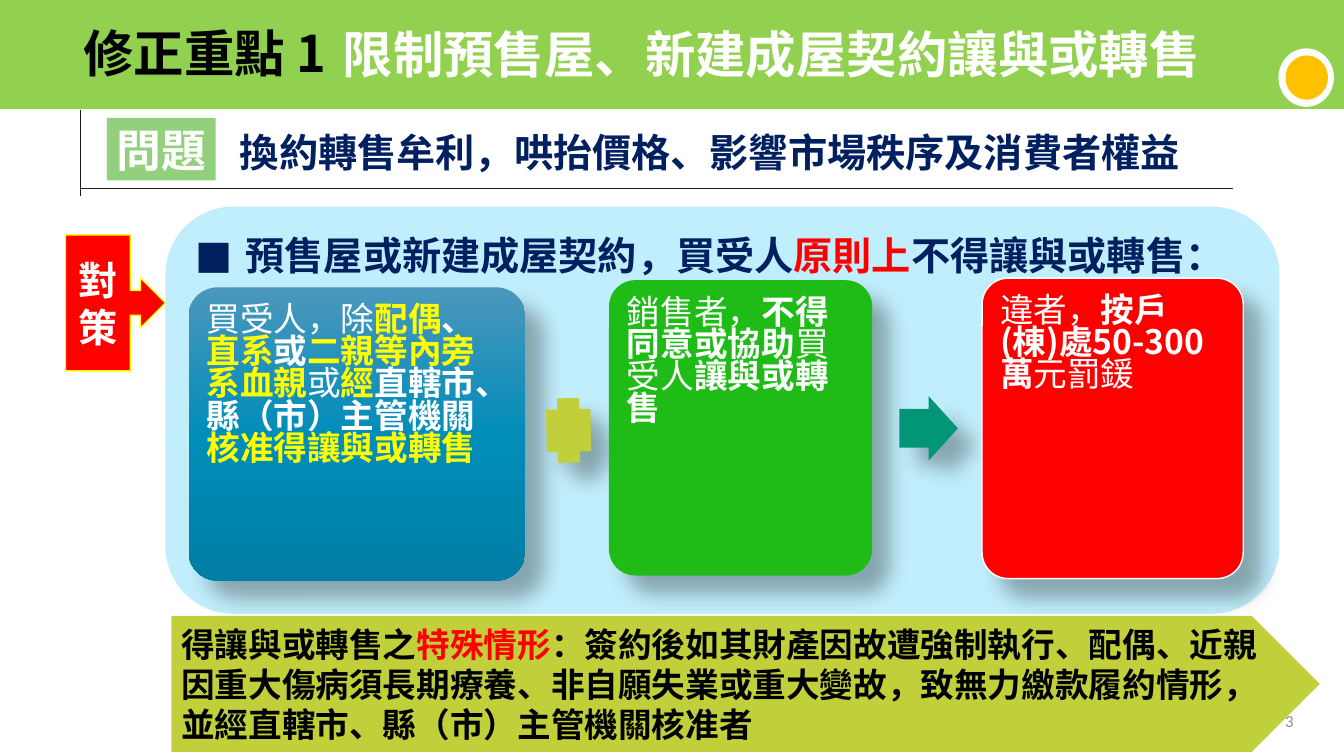
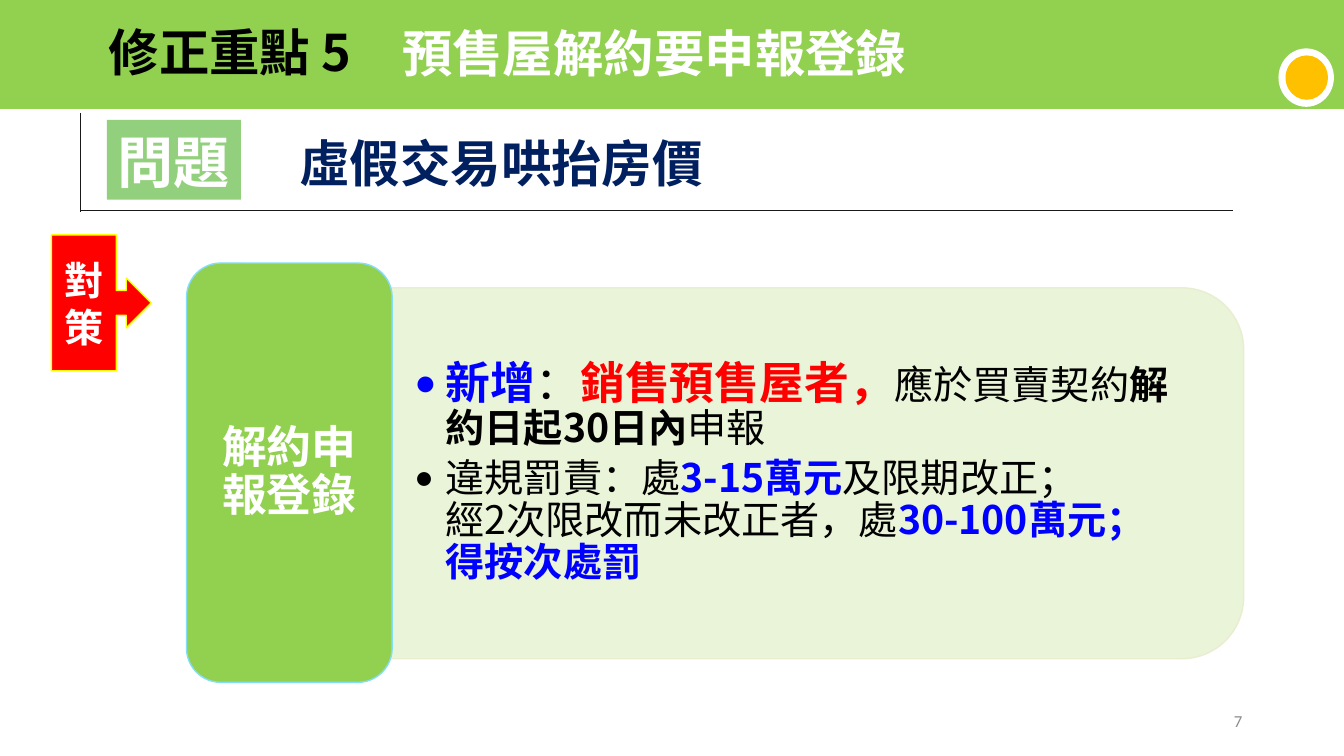
"""Build two slides on the amended rules for pre-sale housing."""
from copy import deepcopy
from dataclasses import dataclass

from pptx import Presentation
from pptx.dml.color import RGBColor
from pptx.enum.shapes import MSO_CONNECTOR as Connector
from pptx.enum.shapes import MSO_SHAPE as Shape
from pptx.enum.text import MSO_ANCHOR as Anchor
from pptx.enum.text import PP_ALIGN as Align
from pptx.oxml.ns import qn
from pptx.oxml.xmlchemy import OxmlElement
from pptx.util import Inches, Pt


@dataclass(frozen=True)
class Theme:
    """Colours, fonts and type sizes of the deck."""
    font: str = "Noto Sans CJK SC"
    number_font: str = "Calibri"
    white: str = "FFFFFF"
    black: str = "000000"
    band: str = "92D050"
    amber: str = "FFC000"
    navy: str = "002060"
    red: str = "FF0000"
    yellow: str = "FFFF00"
    blue: str = "0000FF"
    label: str = "93D07D"
    rule: str = "191919"
    grey: str = "8C8C8C"
    panel: str = "C1EEFC"
    green: str = "1FBB16"
    teal: str = "029676"
    lime: str = "C0CF3A"
    pale: str = "E8F3D4"
    pale_line: str = "E8EDCE"
    sky_line: str = "84DDF9"
    gradient: tuple = ((0, "4B97BC"), (0.5, "018DB9"), (1, "007EA5"))
    title: int = 36
    huge: int = 40
    large: int = 32
    body: int = 28
    card: int = 24
    number: int = 12


THEME = Theme()


@dataclass(frozen=True)
class Span:
    """A stretch of text in one format; a newline is a line break."""
    text: str
    size: int
    color: str = THEME.black
    bold: bool = True
    font: str = THEME.font


def add_child(parent, tag, **attributes):
    """Append an XML element and return it."""
    child = OxmlElement(tag)
    for name, value in attributes.items():
        child.set(name, str(value))
    parent.append(child)
    return child


def add_span(paragraph, span):
    """Add the runs and line breaks of one span."""
    for index, line in enumerate(span.text.split("\n")):
        if index:
            paragraph.add_line_break()
        run = paragraph.add_run()
        run.text = line
        run.font.name = span.font
        run.font.size = Pt(span.size)
        run.font.bold = span.bold
        run.font.color.rgb = RGBColor.from_string(span.color)
        add_child(run.font._element, "a:ea", typeface=span.font)


def set_bullet(paragraph, character, indent):
    """Give a paragraph a hanging bullet."""
    properties = paragraph._p.get_or_add_pPr()
    properties.set("marL", str(Inches(indent)))
    properties.set("indent", str(-Inches(indent)))
    add_child(properties, "a:buFont", typeface=THEME.number_font)
    add_child(properties, "a:buChar", char=character)


def write(shape, *paragraphs, align=Align.LEFT, anchor=Anchor.TOP, margins=(0.1, 0.05),
          spacing=None, after=0, bullet=None, wrap=True):
    """Write paragraphs, each a list of spans, into a shape."""
    frame = shape.text_frame
    frame.word_wrap = wrap
    frame.vertical_anchor = anchor
    frame.margin_left = frame.margin_right = Inches(margins[0])
    frame.margin_top = frame.margin_bottom = Inches(margins[1])
    for index, spans in enumerate(paragraphs):
        paragraph = frame.add_paragraph() if index else frame.paragraphs[0]
        if bullet:
            set_bullet(paragraph, *bullet)
        paragraph.alignment = align
        paragraph.line_spacing = spacing
        paragraph.space_after = Pt(after)
        for span in spans:
            add_span(paragraph, span)


def add_text(slide, box, *paragraphs, **layout):
    """Add a text box."""
    shape = slide.shapes.add_textbox(*map(Inches, box))
    write(shape, *paragraphs, **layout)
    return shape


def add_block(slide, kind, box, fill, line=None, adjust=None, rotation=0):
    """Add a flat preset shape."""
    shape = slide.shapes.add_shape(kind, *map(Inches, box))
    shape.shadow.inherit = False
    shape.fill.solid()
    shape.fill.fore_color.rgb = RGBColor.from_string(fill)
    if line:
        shape.line.color.rgb = RGBColor.from_string(line)
        shape.line.width = Pt(1)
    else:
        shape.line.fill.background()
    if adjust is not None:
        shape.adjustments[0] = adjust
    shape.rotation = rotation
    return shape


def add_shadow(shape):
    """Give a shape a soft shadow to the lower right."""
    effects = shape._element.spPr.find(qn("a:effectLst"))
    shadow = add_child(effects, "a:outerShdw", blurRad=Pt(15), dist=Pt(18),
                       dir=45 * 60000, algn="tl", rotWithShape=0)
    color = add_child(shadow, "a:srgbClr", val=THEME.black)
    add_child(color, "a:alpha", val=30000)


def set_gradient(shape, stops):
    """Fill a shape with a gradient from top to bottom."""
    shape.fill.gradient()
    shape.fill.gradient_angle = 270
    stop_list = shape._element.spPr.find(qn("a:gradFill")).find(qn("a:gsLst"))
    while len(stop_list) < len(stops):
        stop_list.append(deepcopy(stop_list[0]))
    for stop, (position, color) in zip(shape.fill.gradient_stops, stops):
        stop.position = position
        stop.color.rgb = RGBColor.from_string(color)


def set_opacity(shape, percent):
    """Make the fill and the line of a shape partly transparent."""
    for color in shape._element.spPr.iter(qn("a:srgbClr")):
        add_child(color, "a:alpha", val=percent * 1000)


def add_rule(slide, left, top, right, bottom):
    """Add a thin straight line."""
    rule = slide.shapes.add_connector(
        Connector.STRAIGHT, *map(Inches, (left, top, right, bottom)))
    rule.line.color.rgb = RGBColor.from_string(THEME.rule)
    rule.line.width = Pt(0.75)
    add_child(rule._element.spPr, "a:effectLst")


def add_header(slide, heading, heading_at, topic, topic_box):
    """Add the band with its sun, the heading and the topic."""
    add_block(slide, Shape.RECTANGLE, (0, 0, 13.33, 1.08), THEME.band)
    add_block(slide, Shape.OVAL, (12.68, 0.48, 0.55, 0.58), THEME.white)
    add_block(slide, Shape.OVAL, (12.75, 0.55, 0.42, 0.44), THEME.amber)
    add_text(slide, (*heading_at, 11.5, 0.53), [Span(heading, THEME.title)],
             anchor=Anchor.MIDDLE, spacing=0.9)
    add_text(slide, topic_box, [Span(topic, THEME.title, THEME.white)], wrap=False)


def add_problem(slide, problem, box, size, label_box, label_size, rules, nudge=0):
    """Add the problem label, its statement and the crossing rules."""
    rule_top, rule_bottom, rule_level = rules
    add_rule(slide, 0.8, rule_level, 12.23, rule_level)
    add_rule(slide, 0.8, rule_top, 0.8, rule_bottom)
    add_text(slide, box, [Span(problem, size, THEME.navy)], margins=(0, 0))
    label = add_block(slide, Shape.RECTANGLE, label_box, THEME.label)
    write(label, [Span("問題", label_size, THEME.white)], align=Align.CENTER,
          anchor=Anchor.MIDDLE, margins=(0, 0), spacing=Pt(39.2))
    label.text_frame.margin_top = Inches(2 * nudge)


def add_remedy(slide, left):
    """Add the red callout that points to the remedy."""
    callout = add_block(slide, Shape.RIGHT_ARROW_CALLOUT, (left, 2.33, 0.99, 1.35),
                        THEME.red, THEME.yellow)
    write(callout, [Span("對策", THEME.body, THEME.white)],
          align=Align.CENTER, anchor=Anchor.MIDDLE)


def add_page_number(slide, left, number):
    """Add the page number."""
    span = Span(number, THEME.number, THEME.grey, False, THEME.number_font)
    add_text(slide, (left, 6.95, 3, 0.4), [span], align=Align.RIGHT, anchor=Anchor.MIDDLE)


def add_card(slide, box, fill, spans, line=None):
    """Add a rounded card with a shadow and inset text."""
    left, top, width, height = box
    card = add_block(slide, Shape.ROUNDED_RECTANGLE, box, fill, line, 0.1)
    add_shadow(card)
    add_text(slide, (left + 0.08, top + 0.08, width - 0.16, height - 0.16), spans,
             margins=(0.1, 0.1), spacing=0.8)
    return card


def card_span(text, bold=True, color=THEME.white):
    """Return a span in card size."""
    return Span(text, THEME.card, color, bold)


def build_transfer_slide(slide):
    """Build the slide on limits to transfer and resale."""
    add_header(slide, "修正重點 1", (0.73, 0.29),
               "限制預售屋、新建成屋契約讓與或轉售", (3.3, 0.18, 8.78, 0.71))
    add_page_number(slide, 9.93, "3")
    panel = add_block(slide, Shape.ROUNDED_RECTANGLE, (1.64, 2.05, 11.05, 4.04), THEME.panel)
    write(panel, [Span("預售屋或新建成屋契約，買受人", THEME.body, THEME.navy),
                  Span("原則上", THEME.body, THEME.red),
                  Span("不得讓與或轉售：", THEME.body, THEME.navy)], bullet=("■", 0.5))
    add_problem(slide, "換約轉售牟利，哄抬價格、影響市場秩序及消費者權益",
                (2.38, 1.27, 9.71, 0.47), THEME.body,
                (1.06, 1.17, 1.08, 0.62), THEME.large, (1.09, 1.94, 1.87))
    add_remedy(slide, 0.65)

    buyer = add_card(slide, (1.87, 2.85, 3.34, 2.91), THEME.gradient[0][1], [
        card_span("買受人，除", False), card_span("配偶", color=THEME.yellow),
        card_span("、"), card_span("直系", color=THEME.yellow), card_span("或"),
        card_span("二親等內旁系血親", color=THEME.yellow), card_span("或", False),
        card_span("經", color=THEME.yellow), card_span("直轄市、縣（市）主管機關"),
        card_span("核准得讓與或轉售", color=THEME.yellow)])
    set_gradient(buyer, THEME.gradient)
    add_shadow(add_block(slide, Shape.CROSS, (5.42, 3.95, 0.44, 0.64), THEME.lime,
                         rotation=359))
    add_card(slide, (6.04, 2.78, 2.61, 2.93), THEME.green, [
        card_span("銷售者，", False), card_span("不得同意或協助"),
        card_span("買受人", False), card_span("讓與或轉售")])
    add_shadow(add_block(slide, Shape.RIGHT_ARROW, (8.92, 3.93, 0.58, 0.64), THEME.teal,
                         adjust=0.6))
    add_card(slide, (9.74, 2.76, 2.59, 2.98), THEME.red, [
        card_span("違者，", False), card_span("按戶(棟)處50-300萬"),
        card_span("元罰鍰", False)], THEME.white)

    exception = add_block(slide, Shape.PENTAGON, (1.7, 6.11, 11.39, 1.35), THEME.lime)
    write(exception, [
        Span("得讓與或轉售之", THEME.card), Span("特殊情形", THEME.card, THEME.red),
        Span("：簽約後如其財產因故遭強制執行、配偶、近親因重大傷病須長期療養、"
             "非自願失業或重大變故，致無力繳款履約情形，"
             "並經直轄市、縣（市）主管機關核准者", THEME.card)], anchor=Anchor.MIDDLE)


def build_cancellation_slide(slide):
    """Build the slide on reporting cancelled contracts."""
    add_header(slide, "修正重點 5", (0.98, 0.28),
               "預售屋解約要申報登錄", (3.89, 0.17, 5.25, 0.71))
    add_problem(slide, "虛假交易哄抬房價", (2.97, 1.31, 9.15, 0.61), THEME.title,
                (1.06, 1.19, 1.33, 0.79), THEME.huge, (1.12, 2.1, 2.09), 0.07)
    panel = add_block(slide, Shape.ROUND_2_SAME_RECTANGLE, (6.25, 0.45, 3.68, 8.49),
                      THEME.pale, THEME.pale_line, rotation=90)
    set_opacity(panel, 90)
    add_text(slide, (3.84, 3.03, 8.31, 3.32), [
        Span("新增", THEME.large, THEME.blue), Span("：", THEME.large, bold=False),
        Span("銷售預售屋者，", THEME.large, THEME.red),
        Span("應於買賣契約", THEME.body, bold=False),
        Span("解約日起30日內", THEME.body), Span("申報", THEME.body, bold=False),
    ], [
        Span("違規罰責：處", THEME.body, bold=False),
        Span("3-15萬元", THEME.body, THEME.blue),
        Span("及限期改正；\n經2次限改而未改正者，處", THEME.body, bold=False),
        Span("30-100萬元；\n得按次處罰", THEME.body, THEME.blue),
    ], anchor=Anchor.MIDDLE, margins=(0.27, 0.14), spacing=0.9, after=5, bullet=("•", 0.31))
    topic = add_block(slide, Shape.ROUNDED_RECTANGLE, (1.85, 2.61, 2.04, 4.16),
                      THEME.band, THEME.sky_line)
    write(topic, [Span("解約申\n報登錄", THEME.large, THEME.white)], align=Align.CENTER,
          anchor=Anchor.MIDDLE, margins=(0.1, 0.07), spacing=0.9)
    add_remedy(slide, 0.51)
    add_page_number(slide, 9.42, "7")


def main():
    """Build and save the presentation."""
    presentation = Presentation()
    presentation.slide_width = Inches(13.33)
    presentation.slide_height = Inches(7.5)
    for build in (build_transfer_slide, build_cancellation_slide):
        build(presentation.slides.add_slide(presentation.slide_layouts[6]))
    presentation.save("out.pptx")


if __name__ == "__main__":
    main()
